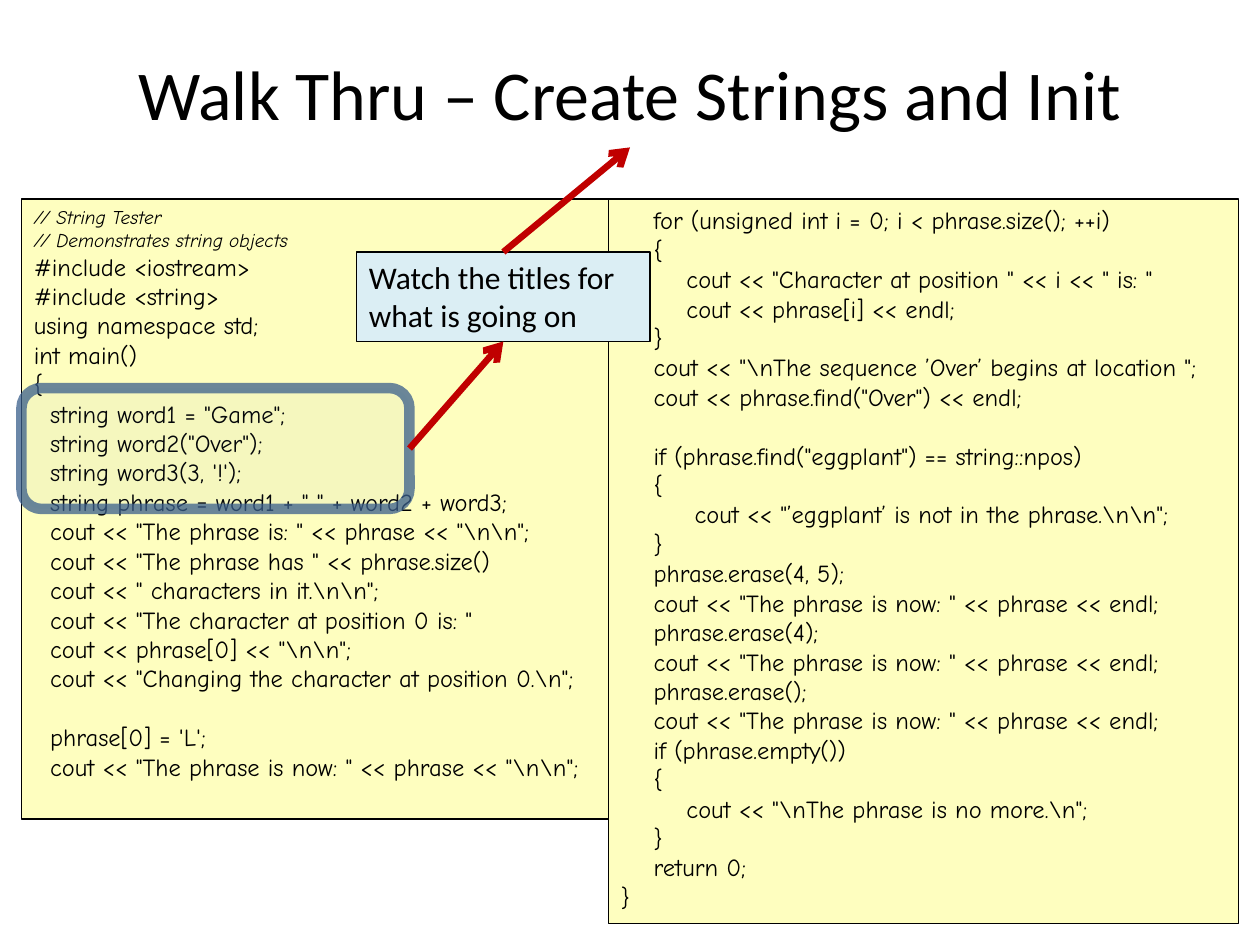
from dataclasses import dataclass

import pptx
import pptx.dml.color
import pptx.enum.shapes
import pptx.enum.text
import pptx.oxml.ns
import pptx.util
from lxml import etree
from pptx.util import Inches

COLORS = {
    "text": "000000",
    "code": "FEFEBF",
    "callout": "DBEEF4",
    "highlight": "4F81BD",
    "highlight_line": "3A5F8C",
    "arrow": "C00000",
}
CODE_FONT = "Comic Neue"
BODY_FONT = "Calibri"
SPACE_WIDTH = 0.065
BLANK_LINE = 16.8
TOP, LEFT, BOTTOM, RIGHT = range(4)
SHAPES = pptx.enum.shapes.MSO_SHAPE
ALIGN = pptx.enum.text.PP_ALIGN
ANCHOR = pptx.enum.text.MSO_ANCHOR

LEFT_CODE = r'''// String Tester
// Demonstrates string objects
#include <iostream>
#include <string>
using namespace std;
int main()
{
  string word1 = "Game";
  string word2("Over");
  string word3(3, '!');
  string phrase = word1 + " " + word2 + word3;
  cout << "The phrase is: " << phrase << "\n\n";
  cout << "The phrase has " << phrase.size()
  cout << " characters in it.\n\n";
  cout << "The character at position 0 is: "
  cout << phrase[0] << "\n\n";
  cout << "Changing the character at position 0.\n";

  phrase[0] = 'L';
  cout << "The phrase is now: " << phrase << "\n\n";'''

RIGHT_CODE = r'''    for (unsigned int i = 0; i < phrase.size(); ++i)
    {
        cout << "Character at position " << i << " is: "
        cout << phrase[i] << endl;
    }
    cout << "\nThe sequence ’Over’ begins at location ";
    cout << phrase.find("Over") << endl;

    if (phrase.find("eggplant") == string::npos)
    {
         cout << "’eggplant’ is not in the phrase.\n\n";
    }
    phrase.erase(4, 5);
    cout << "The phrase is now: " << phrase << endl;
    phrase.erase(4);
    cout << "The phrase is now: " << phrase << endl;
    phrase.erase();
    cout << "The phrase is now: " << phrase << endl;
    if (phrase.empty())
    {
        cout << "\nThe phrase is no more.\n";
    }
    return 0;
}'''


@dataclass
class Box:
    left: float
    top: float
    width: float
    height: float
    fill: str
    line: str = "text"
    line_width: float = 0.75
    shape: int = SHAPES.RECTANGLE


@dataclass
class CodePanel:
    box: Box
    code: str


PANELS = [
    CodePanel(Box(0.17, 1.58, 4.67, 4.92, "code"), LEFT_CODE),
    CodePanel(Box(4.83, 1.58, 5, 5.75, "code"), RIGHT_CODE),
]
HIGHLIGHT = Box(0.17, 3.08, 3.08, 0.96, "highlight", "highlight_line", 6,
                SHAPES.ROUNDED_RECTANGLE)
CALLOUT = Box(2.83, 2, 2.33, 0.71, "callout")


def rgb(name: str) -> pptx.dml.color.RGBColor:
    return pptx.dml.color.RGBColor.from_string(COLORS[name])


def set_alpha(fill_parent, percent: int) -> None:
    color = fill_parent.find(pptx.oxml.ns.qn("a:solidFill"))[0]
    alpha = etree.SubElement(color, pptx.oxml.ns.qn("a:alpha"))
    alpha.set("val", str(percent * 1000))


def style(p, font: str, size: float, align=ALIGN.LEFT) -> None:
    p.alignment = align
    p.font.name = font
    p.font.size = pptx.util.Pt(size)
    p.font.color.rgb = rgb("text")


def add_box(s, box: Box):
    sp = s.shapes.add_shape(box.shape, Inches(box.left), Inches(box.top),
                            Inches(box.width), Inches(box.height))
    sp.shadow.inherit = False
    sp.fill.solid()
    sp.fill.fore_color.rgb = rgb(box.fill)
    sp.line.color.rgb = rgb(box.line)
    sp.line.width = pptx.util.Pt(box.line_width)
    sp.text_frame.word_wrap = True
    sp.text_frame.vertical_anchor = ANCHOR.TOP
    return sp


def add_code(s, panel: CodePanel) -> None:
    tf = add_box(s, panel.box).text_frame
    p = tf.paragraphs[0]
    gap = 0
    for i, line in enumerate(panel.code.split("\n")):
        text = line.lstrip()
        if not text:
            gap += BLANK_LINE
            continue
        if i:
            p = tf.add_paragraph()
        p.text = text
        comment = text.startswith("//")
        style(p, CODE_FONT, 11 if comment else 14)
        p.font.italic = comment
        indent = Inches((len(line) - len(text)) * SPACE_WIDTH)
        p._p.get_or_add_pPr().set("marL", str(indent))
        if gap:
            p.space_before = pptx.util.Pt(gap)
            gap = 0


def add_arrow(s, start, start_side: int, end, end_side: int) -> None:
    arrow = s.shapes.add_connector(
        pptx.enum.shapes.MSO_CONNECTOR.STRAIGHT, 0, 0, 0, 0)
    arrow.begin_connect(start, start_side)
    arrow.end_connect(end, end_side)
    arrow.line.color.rgb = rgb("arrow")
    arrow.line.width = pptx.util.Pt(3.75)
    tail = etree.SubElement(arrow.line._get_or_add_ln(),
                            pptx.oxml.ns.qn("a:tailEnd"))
    tail.set("type", "arrow")
    etree.SubElement(arrow._element.spPr, pptx.oxml.ns.qn("a:effectLst"))


def main() -> None:
    prs = pptx.Presentation()
    prs.slide_width, prs.slide_height = Inches(10), Inches(7.5)
    s = prs.slides.add_slide(prs.slide_layouts[6])

    title = s.shapes.add_textbox(Inches(0.5), Inches(0.3),
                                 Inches(9), Inches(0.87))
    tf = title.text_frame
    tf.word_wrap = True
    tf.vertical_anchor = ANCHOR.MIDDLE
    tf.text = "Walk Thru – Create Strings and Init"
    style(tf.paragraphs[0], BODY_FONT, 40, ALIGN.CENTER)

    for panel in PANELS:
        add_code(s, panel)

    highlight = add_box(s, HIGHLIGHT)
    set_alpha(highlight._element.spPr, 5)
    set_alpha(highlight.line._get_or_add_ln(), 75)

    callout = add_box(s, CALLOUT)
    tf = callout.text_frame
    tf.auto_size = pptx.enum.text.MSO_AUTO_SIZE.SHAPE_TO_FIT_TEXT
    tf.text = "Watch the titles for what is going on"
    style(tf.paragraphs[0], BODY_FONT, 18)

    add_arrow(s, highlight, RIGHT, callout, BOTTOM)
    add_arrow(s, callout, TOP, title, BOTTOM)
    prs.save("out.pptx")


if __name__ == "__main__":
    main()
